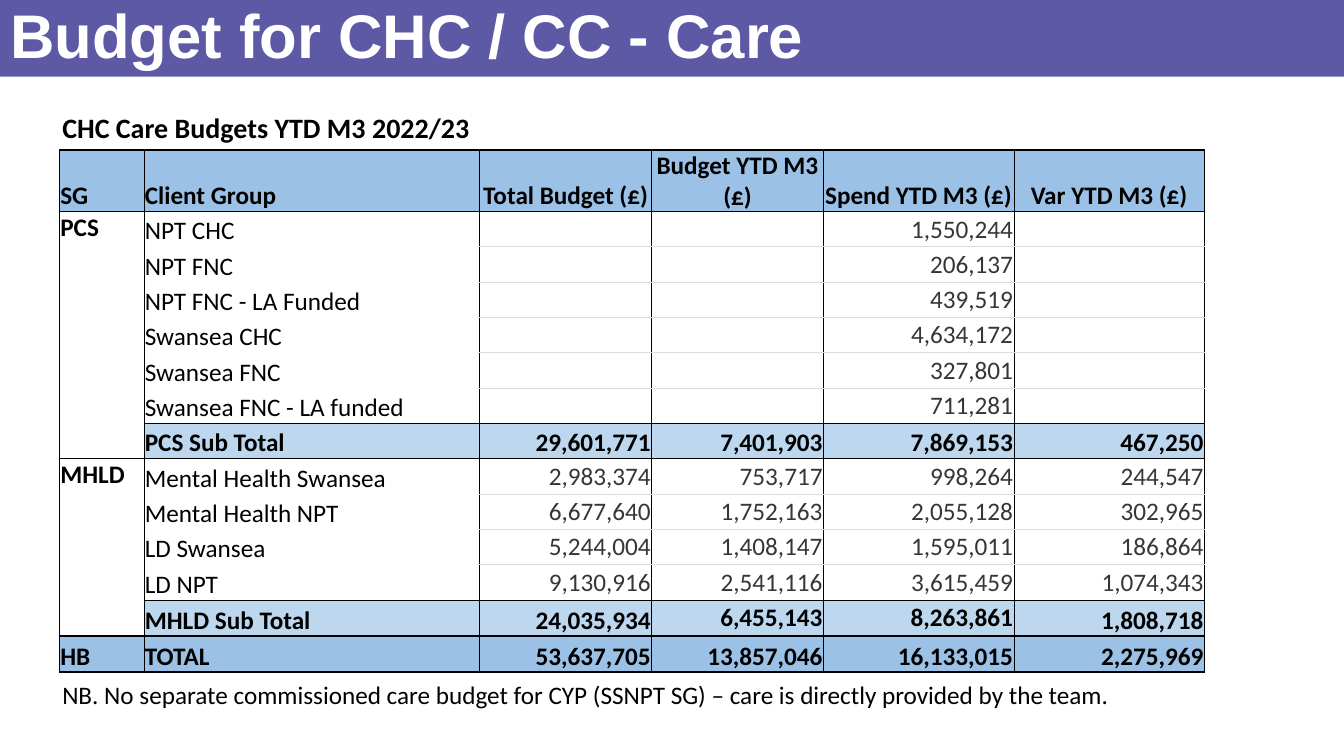
from pptx import Presentation
from pptx.dml.color import RGBColor
from pptx.enum.text import MSO_ANCHOR as Anchor, MSO_AUTO_SIZE as AutoSize, PP_ALIGN as Align
from pptx.oxml.ns import qn
from pptx.util import Cm, Pt
from lxml.etree import SubElement

COLORS = {
    "white": "FFFFFF", "black": "000000", "value": "363636", "grid": "DCDCDC",
    "title": "5D59A5", "head": "9BC2E6", "subtotal": "BDD7EE",
}
ROWS = [
    ("SG", "Client Group", "Total Budget (£)", "Budget YTD M3 (£)", "Spend YTD M3 (£)", "Var YTD M3 (£)"),
    ("PCS", "NPT CHC", "", "", "1,550,244", ""),
    ("", "NPT FNC", "", "", "206,137", ""),
    ("", "NPT FNC - LA Funded", "", "", "439,519", ""),
    ("", "Swansea CHC", "", "", "4,634,172", ""),
    ("", "Swansea FNC", "", "", "327,801", ""),
    ("", "Swansea FNC - LA funded", "", "", "711,281", ""),
    ("", "PCS Sub Total", "29,601,771", "7,401,903", "7,869,153", "467,250"),
    ("MHLD", "Mental Health Swansea", "2,983,374", "753,717", "998,264", "244,547"),
    ("", "Mental Health NPT", "6,677,640", "1,752,163", "2,055,128", "302,965"),
    ("", "LD Swansea", "5,244,004", "1,408,147", "1,595,011", "186,864"),
    ("", "LD NPT", "9,130,916", "2,541,116", "3,615,459", "1,074,343"),
    ("", "MHLD Sub Total", "24,035,934", "6,455,143", "8,263,861", "1,808,718"),
    ("HB", "TOTAL", "53,637,705", "13,857,046", "16,133,015", "2,275,969"),
]
WIDTHS = [2.13, 8.46, 4.33, 4.33, 4.8, 4.8]
HEAD, TOTAL = 0, len(ROWS) - 1
SUBTOTALS = [7, 12]
RULES = {0: 1, 1: 1, 7: 0.5, 8: 0.5, 12: 0.5, 13: 1, 14: 1}
NO_STYLE = "{2D5ABB26-0587-4C30-8999-92F81FD0307C}"


def rgb(name):
    return RGBColor.from_string(COLORS[name])


def write(tf, text, size=18, font="Calibri", color="black", bold=False, align=Align.LEFT, spacing=None):
    p = tf.paragraphs[0]
    p.alignment = align
    p.line_spacing = spacing
    r = p.add_run()
    r.text = text
    r.font.size = Pt(size)
    r.font.name = font
    r.font.bold = bold
    r.font.color.rgb = rgb(color)


def add_border(cell, side, width, color):
    ln = SubElement(cell._tc.get_or_add_tcPr(), qn(f"a:ln{side}"), w=str(Pt(width)))
    if width:
        fill = SubElement(ln, qn("a:solidFill"))
        SubElement(fill, qn("a:srgbClr"), val=COLORS[color])
    else:
        SubElement(ln, qn("a:noFill"))


def row_rule(line, col):
    if line in RULES and not (col == 0 and line in SUBTOTALS):
        return RULES[line], "black"
    return (0.5 if col >= 2 else 0), "grid"


class BudgetSlide:
    def __init__(self, prs):
        self.s = prs.slides.add_slide(prs.slide_layouts[5])

    def title(self, text, width, height):
        sp = self.s.shapes.title
        sp.left, sp.top, sp.width, sp.height = 0, 0, Cm(width), Cm(height)
        sp.fill.solid()
        sp.fill.fore_color.rgb = rgb("title")
        tf = sp.text_frame
        tf.auto_size = AutoSize.NONE
        tf.vertical_anchor = Anchor.MIDDLE
        write(tf, text, size=44, font="Arial", color="white", bold=True, spacing=0.9)

    def text(self, text, left, top, width, height, wrap=True, **style):
        tf = self.s.shapes.add_textbox(Cm(left), Cm(top), Cm(width), Cm(height)).text_frame
        tf.word_wrap = wrap
        tf.auto_size = AutoSize.SHAPE_TO_FIT_TEXT
        write(tf, text, **style)

    def table(self, rows, left, top):
        heights = [0.91 if i in (HEAD, 12, TOTAL) else 0.89 for i in range(len(rows))]
        frame = self.s.shapes.add_table(len(rows), len(WIDTHS), Cm(left), Cm(top),
                                        Cm(sum(WIDTHS)), Cm(sum(heights)))
        tbl = frame.table
        tbl.first_row = tbl.horz_banding = False
        tbl._tbl.tblPr.find(qn("a:tableStyleId")).text = NO_STYLE
        for column, width in zip(tbl.columns, WIDTHS):
            column.width = Cm(width)
        for i, height in enumerate(heights):
            tbl.rows[i].height = Cm(height)
            for j, text in enumerate(rows[i]):
                self.cell(tbl.cell(i, j), text, i, j)

    def cell(self, cell, text, i, j):
        strong = i in (HEAD, TOTAL, *SUBTOTALS)
        value = j >= 2 and not strong
        cell.margin_left = cell.margin_right = cell.margin_top = Cm(0.02)
        cell.margin_bottom = 0
        if j == 0 and i not in (HEAD, TOTAL):
            cell.vertical_anchor = Anchor.TOP
        elif value or (i == 12 and j in (3, 4)):
            cell.vertical_anchor = Anchor.MIDDLE
        else:
            cell.vertical_anchor = Anchor.BOTTOM

        add_border(cell, "L", 1 if j == 0 else 0.5, "black")
        add_border(cell, "R", 1 if j == len(WIDTHS) - 1 else 0.5, "black")
        add_border(cell, "T", *row_rule(i, j))
        add_border(cell, "B", *row_rule(i + 1, j))

        if i in (HEAD, TOTAL):
            fill = "head"
        elif i in SUBTOTALS and j:
            fill = "subtotal"
        else:
            fill = "white" if j >= 2 else None
        if fill:
            cell.fill.solid()
            cell.fill.fore_color.rgb = rgb(fill)
        else:
            cell.fill.background()

        if text:
            number_align = Align.CENTER if i == HEAD else Align.RIGHT
            write(cell.text_frame, text, color="value" if value else "black",
                  bold=strong or j == 0, align=number_align if j >= 2 else Align.LEFT)


def main():
    prs = Presentation()
    prs.slide_width, prs.slide_height = Cm(33.87), Cm(19.05)
    slide = BudgetSlide(prs)
    slide.title("Budget for CHC / CC - Care", 33.87, 1.93)
    slide.text("NB. No separate commissioned care budget for CYP (SSNPT SG) – care is directly provided by the team.",
               1.32, 16.99, 27.43, 1.02, wrap=False)
    slide.text("CHC Care Budgets YTD M3 2022/23", 1.32, 2.67, 11.07, 1.12, size=20, bold=True)
    slide.table(ROWS, 1.5, 3.78)
    prs.save("out.pptx")


if __name__ == "__main__":
    main()
